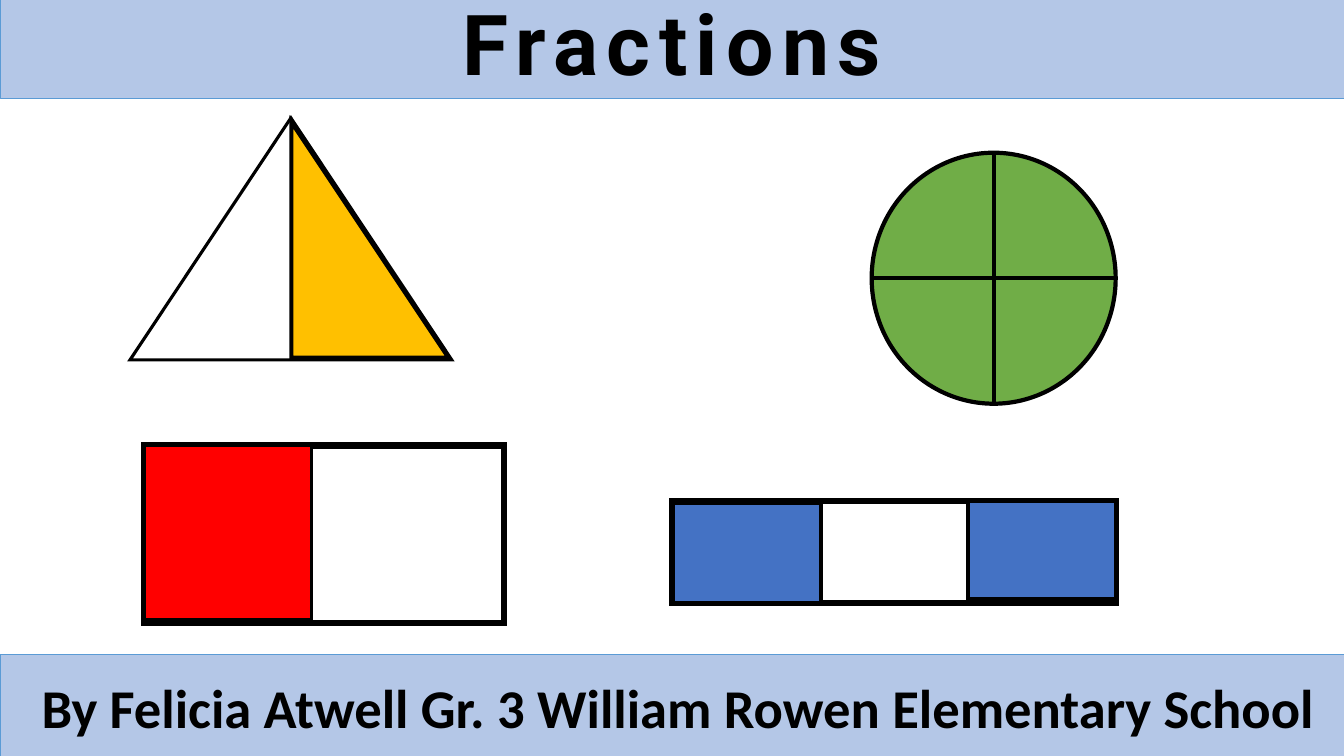
from dataclasses import dataclass

from lxml import etree
from pptx import Presentation
from pptx import util as u
from pptx.dml.color import RGBColor
from pptx.enum import shapes, text
from pptx.oxml.ns import qn

Inches = u.Inches
MSO = shapes.MSO_SHAPE


@dataclass(frozen=True)
class Theme:
    ink: str = "000000"
    white: str = "FFFFFF"
    red: str = "FF0000"
    green: str = "70AD47"
    gold: str = "FFC000"
    blue: str = "4472C4"
    band: str = "B4C7E7"
    band_line: str = "5B9BD5"
    title_font: str = "Roboto"
    title_size: float = 60
    byline_font: str = "Calibri"
    byline_size: float = 39
    thin: float = 2.25
    medium: float = 3
    thick: float = 4.5


THEME = Theme()


def paint(sp, fill, line, width):
    """Give a shape a solid fill and a solid outline."""
    sp.fill.solid()
    sp.fill.fore_color.rgb = RGBColor.from_string(fill)
    sp.line.color.rgb = RGBColor.from_string(line)
    sp.line.width = u.Pt(width)


def add_figure(slide, kind, box, fill, width, rotation=0):
    """Add one fraction figure with a sharp-cornered black outline."""
    sp = slide.shapes.add_shape(kind, *map(Inches, box))
    sp.shadow.inherit = False
    sp.rotation = rotation
    paint(sp, fill, THEME.ink, width)
    miter = etree.SubElement(sp.line._get_or_add_ln(), qn("a:miter"))
    miter.set("lim", "800000")
    return sp


def fill_band(sp, box, words, font, size, anchor):
    """Turn a placeholder into a full-width coloured band of text."""
    sp.left, sp.top, sp.width, sp.height = map(Inches, box)
    paint(sp, THEME.band, THEME.band_line, 0.5)
    tf = sp.text_frame
    tf.text = words
    tf.word_wrap = True
    tf.auto_size = text.MSO_AUTO_SIZE.NONE
    tf.vertical_anchor = anchor
    p = tf.paragraphs[0]
    p.alignment = text.PP_ALIGN.CENTER
    p.line_spacing = 0.9
    p.space_before = u.Pt(0)
    p.font.name = font
    p.font.size = u.Pt(size)
    p.font.bold = True
    p.font.color.rgb = RGBColor.from_string(THEME.ink)
    return tf


def main():
    prs = Presentation()
    prs.slide_width, prs.slide_height = Inches(13.33), Inches(7.5)
    slide = prs.slides.add_slide(prs.slide_layouts[0])

    # Title band, with widely spaced letters
    title = fill_band(slide.shapes.title, (0, -0.03, 13.33, 1.01), "Fractions",
                      THEME.title_font, THEME.title_size,
                      text.MSO_ANCHOR.BOTTOM)
    title.paragraphs[0].runs[0]._r.get_or_add_rPr().set("spc", "600")

    # Author band, nudged slightly right and down
    byline = fill_band(slide.placeholders[1], (0, 6.49, 13.33, 1.05),
                       "By Felicia Atwell Gr. 3 William Rowen Elementary School",
                       THEME.byline_font, THEME.byline_size,
                       text.MSO_ANCHOR.MIDDLE)
    byline.margin_left, byline.margin_top = Inches(0.22), Inches(0.12)

    # Rectangle: one half
    add_figure(slide, MSO.RECTANGLE, (1.43, 4.42, 3.57, 1.76),
               THEME.white, THEME.thick)
    add_figure(slide, MSO.RECTANGLE, (1.43, 4.42, 1.66, 1.73),
               THEME.red, THEME.thin)

    # Circle: four quarters
    add_figure(slide, MSO.FLOWCHART_OR, (8.61, 1.55, 2.49, 2.42),
               THEME.green, THEME.medium, rotation=90)

    # Triangle: one half
    add_figure(slide, MSO.ISOSCELES_TRIANGLE, (1.29, 1.17, 3.19, 2.4),
               THEME.white, THEME.thin)
    add_figure(slide, MSO.RIGHT_TRIANGLE, (2.89, 1.21, 1.56, 2.34),
               THEME.gold, THEME.medium)

    # Bar: two thirds
    add_figure(slide, MSO.RECTANGLE, (6.67, 4.97, 4.4, 1.01),
               THEME.white, THEME.thick)
    for left, top, height in ((6.67, 4.99, 0.99), (9.6, 4.97, 0.97)):
        add_figure(slide, MSO.RECTANGLE, (left, top, 1.47, height),
                   THEME.blue, THEME.medium)

    prs.save("out.pptx")


if __name__ == "__main__":
    main()
